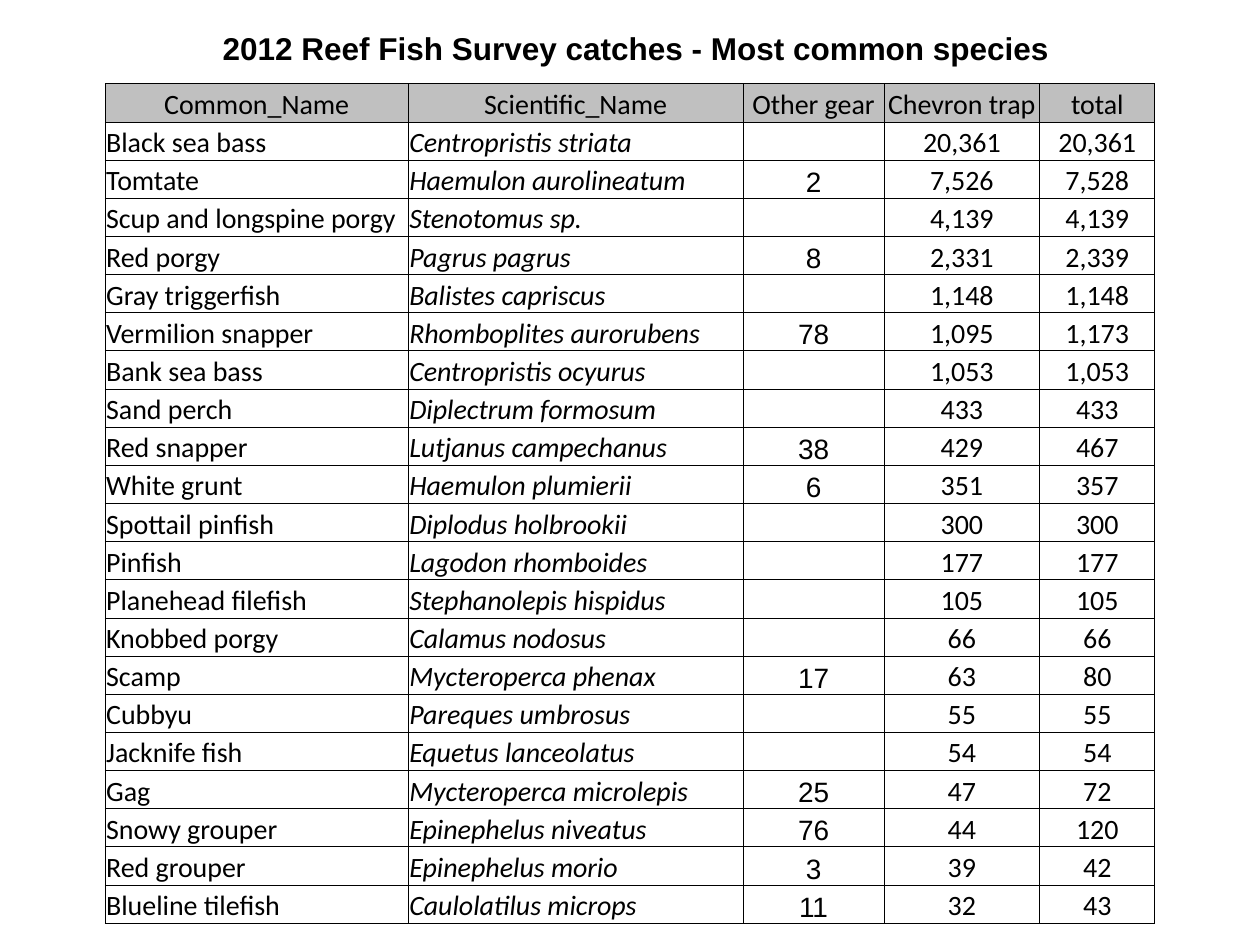
from lxml import etree
from pptx import Presentation
from pptx import util as u
from pptx.dml.color import RGBColor
from pptx.enum import text
from pptx.oxml import ns

BLACK = RGBColor(0x00, 0x00, 0x00)
SILVER = RGBColor(0xC0, 0xC0, 0xC0)
GRAY = RGBColor(0xBF, 0xBF, 0xBF)

TITLE = "2012 Reef Fish Survey catches - Most common species"
HEADERS = ["Common_Name", "Scientific_Name", "Other gear", "Chevron trap", "total"]
HEADER_FILLS = [SILVER, SILVER, GRAY, GRAY, GRAY]
COL_WIDTHS = [6.11, 6.75, 2.84, 3.14, 2.32]
CATCHES = [
    ("Black sea bass", "Centropristis striata", 0, 20361),
    ("Tomtate", "Haemulon aurolineatum", 2, 7526),
    ("Scup and longspine porgy", "Stenotomus sp.", 0, 4139),
    ("Red porgy", "Pagrus pagrus", 8, 2331),
    ("Gray triggerfish", "Balistes capriscus", 0, 1148),
    ("Vermilion snapper", "Rhomboplites aurorubens", 78, 1095),
    ("Bank sea bass", "Centropristis ocyurus", 0, 1053),
    ("Sand perch", "Diplectrum formosum", 0, 433),
    ("Red snapper", "Lutjanus campechanus", 38, 429),
    ("White grunt", "Haemulon plumierii", 6, 351),
    ("Spottail pinfish", "Diplodus holbrookii", 0, 300),
    ("Pinfish", "Lagodon rhomboides", 0, 177),
    ("Planehead filefish", "Stephanolepis hispidus", 0, 105),
    ("Knobbed porgy", "Calamus nodosus", 0, 66),
    ("Scamp", "Mycteroperca phenax", 17, 63),
    ("Cubbyu", "Pareques umbrosus", 0, 55),
    ("Jacknife fish", "Equetus lanceolatus", 0, 54),
    ("Gag", "Mycteroperca microlepis", 25, 47),
    ("Snowy grouper", "Epinephelus niveatus", 76, 44),
    ("Red grouper", "Epinephelus morio", 3, 39),
    ("Blueline tilefish", "Caulolatilus microps", 11, 32),
]


def add_run(p, content, size, font, bold=False, italic=False):
    """Append one formatted black run to a paragraph."""
    r = p.add_run()
    r.text = content
    r.font.size = u.Pt(size)
    r.font.name = font
    r.font.bold = bold
    r.font.italic = italic
    r.font.color.rgb = BLACK


def set_borders(cell, width):
    """Draw a solid black line on all four sides of a cell."""
    tc_pr = cell._tc.get_or_add_tcPr()
    for i, side in enumerate(("lnL", "lnR", "lnT", "lnB")):
        ln = etree.Element(ns.qn(f"a:{side}"), w=str(u.Pt(width)))
        fill = etree.SubElement(ln, ns.qn("a:solidFill"))
        etree.SubElement(fill, ns.qn("a:srgbClr"), val=str(BLACK))
        tc_pr.insert(i, ln)


def fill_cell(cell, content, fill=None, centred=False, font="Calibri", italic=False):
    """Set the text, fill, margins and borders of one cell."""
    cell.margin_left = cell.margin_right = cell.margin_top = u.Cm(0.02)
    cell.margin_bottom = 0
    cell.vertical_anchor = text.MSO_ANCHOR.BOTTOM
    if fill is None:
        cell.fill.background()
    else:
        cell.fill.solid()
        cell.fill.fore_color.rgb = fill
    set_borders(cell, 0.5)
    p = cell.text_frame.paragraphs[0]
    p.alignment = text.PP_ALIGN.CENTER if centred else text.PP_ALIGN.LEFT
    if content:
        add_run(p, content, 16, font, italic=italic)
    else:
        etree.SubElement(p._p, ns.qn("a:endParaRPr"), sz="1600")


def add_title(s, left, top, width, height):
    """Place the heading in its box."""
    tf = s.shapes.add_textbox(left, top, width, height).text_frame
    tf.word_wrap = True
    add_run(tf.paragraphs[0], TITLE, 18, "Arial", bold=True)


def add_catch_table(s, left, top, width, height):
    """Place the catch table, with totals summed over both gears."""
    n_rows = len(CATCHES) + 1
    table = s.shapes.add_table(n_rows, len(HEADERS), left, top, width, height).table
    table.first_row = table.horz_banding = False
    for col, share in zip(table.columns, COL_WIDTHS):
        col.width = int(width * share / sum(COL_WIDTHS))
    for row in table.rows:
        row.height = int(height / n_rows)
    for i, (header, fill) in enumerate(zip(HEADERS, HEADER_FILLS)):
        fill_cell(table.cell(0, i), header, fill, centred=True)
    for i, (common, scientific, other, trap) in enumerate(CATCHES, 1):
        fill_cell(table.cell(i, 0), common)
        fill_cell(table.cell(i, 1), scientific, italic=True)
        fill_cell(table.cell(i, 2), str(other or ""), centred=True, font="Arial")
        fill_cell(table.cell(i, 3), f"{trap:,}", centred=True)
        fill_cell(table.cell(i, 4), f"{other + trap:,}", centred=True)


def main():
    """Build and save the slide."""
    prs = Presentation()
    prs.slide_width, prs.slide_height = u.Cm(25.4), u.Cm(19.05)
    s = prs.slides.add_slide(prs.slide_layouts[6])
    add_catch_table(s, u.Cm(2.12), u.Cm(1.69), u.Cm(21.16), u.Cm(16.93))
    add_title(s, u.Cm(4.24), u.Cm(0.47), u.Cm(17.5), u.Cm(1.02))
    prs.save("out.pptx")


if __name__ == "__main__":
    main()
